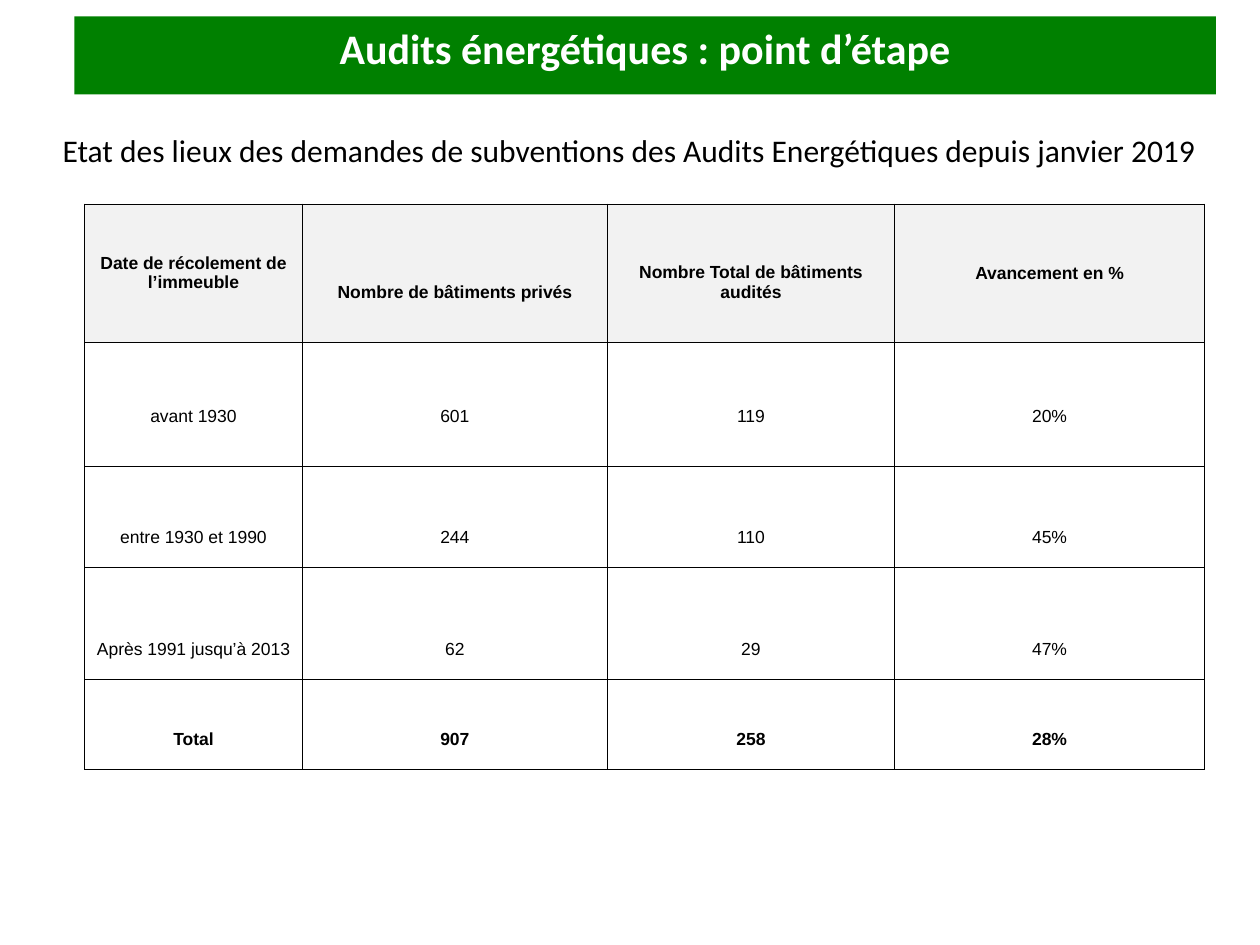
from dataclasses import dataclass

import pptx
import pptx.dml.color
import pptx.enum.shapes
import pptx.enum.text
import pptx.oxml
import pptx.oxml.ns
import pptx.util

SLIDE_W = pptx.util.Inches(10)
SLIDE_H = pptx.util.Inches(7.5)
ANCHOR = pptx.enum.text.MSO_ANCHOR
TABLE_TEXT_SIZE = 10
LINE_HEIGHT = pptx.util.Inches(0.16)

GREEN, GREY, WHITE, BLACK = "008000", "F2F2F2", "FFFFFF", "000000"


@dataclass
class Box:
    """A place on the slide, in percent of its width and height."""
    left: float
    top: float
    width: float
    height: float

    def emu(self) -> tuple:
        return (share(self.left, SLIDE_W), share(self.top, SLIDE_H),
                share(self.width, SLIDE_W), share(self.height, SLIDE_H))


@dataclass
class Row:
    """A table row: height in percent, lines left free under bottom-anchored text."""
    height: float
    texts: tuple
    free_lines: int = 1
    bold: bool = False
    fill: str = ""
    middle: tuple = ()


TITLE = Box(5.9, 1.73, 90.6, 8.27)
SUBTITLE = Box(3.5, 13.2, 92.9, 5.33)
TABLE = Box(6.7, 21.6, 88.9, 59.87)
COLUMNS = (17.3, 24.2, 22.8, 24.6)
ROWS = (
    Row(14.6, ("Date de récolement de l’immeuble", "Nombre de bâtiments privés",
               "Nombre Total de bâtiments audités", "Avancement en %"),
        free_lines=2, bold=True, fill=GREY, middle=(0, 3)),
    Row(13.2, ("avant 1930", "601", "119", "20%"), free_lines=2),
    Row(10.6, ("entre 1930 et 1990", "244", "110", "45%")),
    Row(11.9, ("Après 1991 jusqu’à 2013", "62", "29", "47%")),
    Row(9.5, ("Total", "907", "258", "28%"), bold=True),
)


def share(percent: float, whole: int) -> int:
    return round(whole * percent / 100)


def rgb(color: str) -> pptx.dml.color.RGBColor:
    return pptx.dml.color.RGBColor.from_string(color)


def write(tf, text: str, *, size: float, font: str = "Calibri",
          color: str = BLACK, bold: bool = False) -> None:
    p = tf.paragraphs[0]
    p.alignment = pptx.enum.text.PP_ALIGN.CENTER
    r = p.add_run()
    r.text = text
    r.font.size = pptx.util.Pt(size)
    r.font.name = font
    r.font.bold = bold
    r.font.color.rgb = rgb(color)


def add_borders(cell, color: str = BLACK, width: float = 0.5) -> None:
    tc_pr = cell._tc.get_or_add_tcPr()
    for side in ("lnL", "lnR", "lnT", "lnB"):
        tc_pr.append(pptx.oxml.parse_xml(
            f'<a:{side} {pptx.oxml.ns.nsdecls("a")} w="{pptx.util.Pt(width)}">'
            f'<a:solidFill><a:srgbClr val="{color}"/></a:solidFill></a:{side}>'))


def fill_cell(cell, row: Row, column: int) -> None:
    cell.margin_left = cell.margin_right = cell.margin_top = cell.margin_bottom = 0
    if column in row.middle:
        cell.vertical_anchor = ANCHOR.MIDDLE
    else:
        cell.vertical_anchor = ANCHOR.BOTTOM
        cell.margin_bottom = row.free_lines * LINE_HEIGHT
    add_borders(cell)
    if row.fill:
        cell.fill.solid()
        cell.fill.fore_color.rgb = rgb(row.fill)
    else:
        cell.fill.background()
    write(cell.text_frame, row.texts[column], size=TABLE_TEXT_SIZE,
          font="Arial", bold=row.bold)


def add_audit_table(s) -> None:
    table = s.shapes.add_table(len(ROWS), len(COLUMNS), *TABLE.emu()).table
    for column, width in zip(table.columns, COLUMNS):
        column.width = share(width, SLIDE_W)
    for i, row in enumerate(ROWS):
        table.rows[i].height = share(row.height, SLIDE_H)
        for j in range(len(COLUMNS)):
            fill_cell(table.cell(i, j), row, j)


def add_title(s, text: str) -> None:
    sp = s.shapes.add_shape(pptx.enum.shapes.MSO_SHAPE.RECTANGLE, *TITLE.emu())
    sp.shadow.inherit = False
    sp.fill.solid()
    sp.fill.fore_color.rgb = rgb(GREEN)
    sp.line.fill.background()
    sp.text_frame.vertical_anchor = ANCHOR.TOP
    write(sp.text_frame, text, size=24, color=WHITE, bold=True)


def add_subtitle(s, text: str) -> None:
    tf = s.shapes.add_textbox(*SUBTITLE.emu()).text_frame
    tf.word_wrap = True
    tf.auto_size = pptx.enum.text.MSO_AUTO_SIZE.SHAPE_TO_FIT_TEXT
    write(tf, text, size=18)


def main() -> None:
    prs = pptx.Presentation()
    prs.slide_width, prs.slide_height = SLIDE_W, SLIDE_H
    s = prs.slides.add_slide(prs.slide_layouts[6])
    add_audit_table(s)
    add_title(s, "Audits énergétiques : point d’étape")
    add_subtitle(s, "Etat des lieux des demandes de subventions "
                    "des Audits Energétiques depuis janvier 2019")
    prs.save("out.pptx")


if __name__ == "__main__":
    main()
